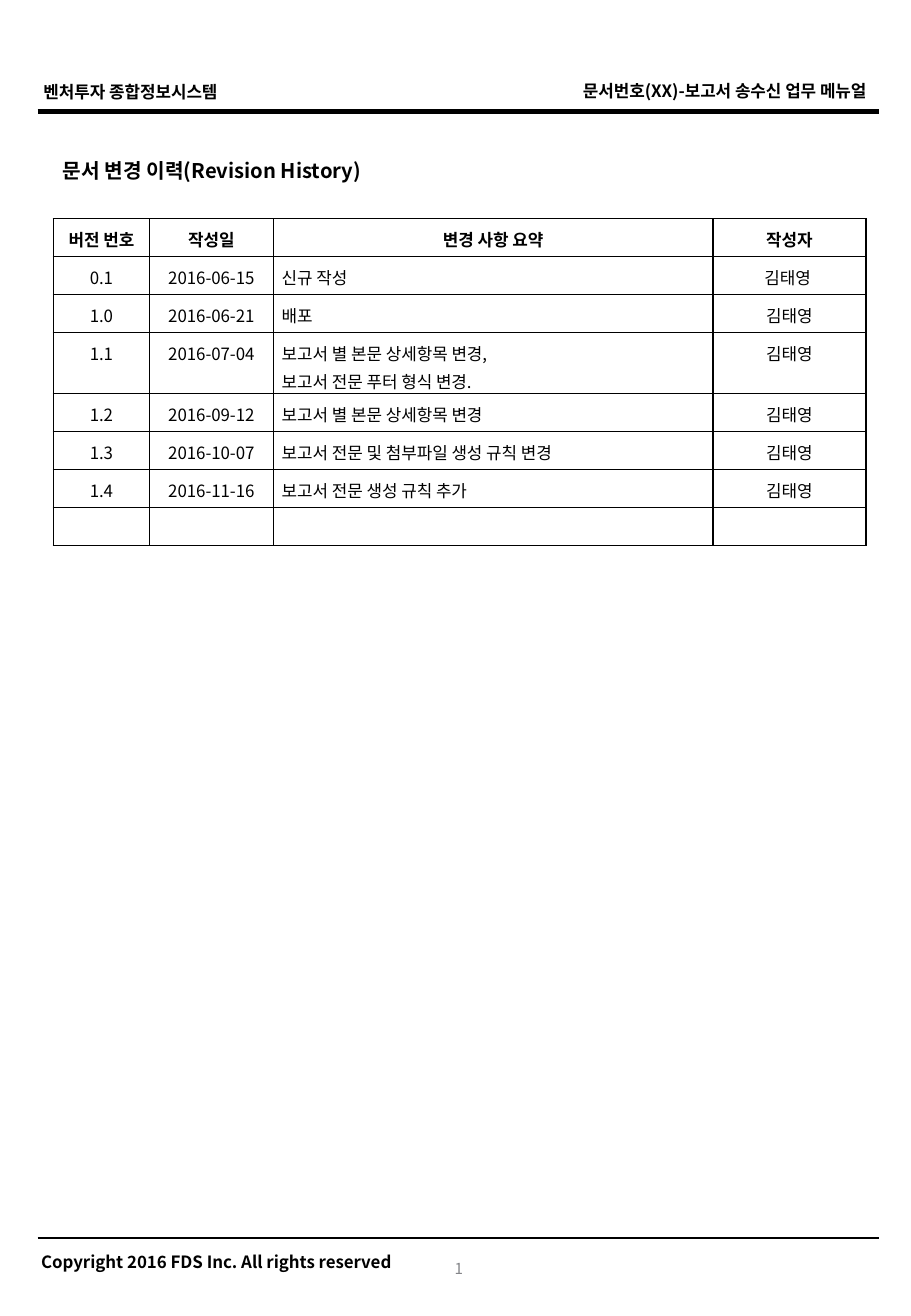
from lxml.etree import SubElement
from pptx import Presentation
from pptx.dml.color import RGBColor
from pptx.enum.shapes import MSO_CONNECTOR as Link
from pptx.enum.text import MSO_ANCHOR as Anchor, PP_ALIGN as Align
from pptx.oxml.ns import qn
from pptx.util import Inches, Pt

FACE = "Noto Sans CJK KR"
BLACK = "000000"
COLS = [0.79, 1.02, 3.62, 1.26]
HEAD = ["버전 번호", "작성일", "변경 사항 요약", "작성자"]
LOG = [
    ["0.1", "2016-06-15", "신규 작성", "김태영 "],
    ["1.0", "2016-06-21", "배포", "김태영"],
    ["1.1", "2016-07-04", "보고서 별 본문 상세항목 변경,\n보고서 전문 푸터 형식 변경.", "김태영"],
    ["1.2", "2016-09-12", "보고서 별 본문 상세항목 변경", "김태영"],
    ["1.3", "2016-10-07", "보고서 전문 및 첨부파일 생성 규칙 변경", "김태영"],
    ["1.4", "2016-11-16", "보고서 전문 생성 규칙 추가", "김태영"],
    ["", "", "", ""],
]


def paint(color):
    return RGBColor.from_string(color)


def style(para, size, bold, color=BLACK, align=Align.LEFT):
    para.alignment = align
    font = para.font
    font.size = Pt(size)
    font.bold = bold
    font.color.rgb = paint(color)
    font.name = FACE
    props = para._p.pPr.find(qn("a:defRPr"))
    SubElement(props, qn("a:ea"), typeface=FACE)


def add_text(slide, text, box, size=10, bold=True, color=BLACK,
             align=Align.LEFT, anchor=Anchor.MIDDLE):
    frame = slide.shapes.add_textbox(*map(Inches, box)).text_frame
    frame.word_wrap = True
    frame.vertical_anchor = anchor
    frame.margin_top = frame.margin_bottom = Inches(0.03)
    frame.text = text
    style(frame.paragraphs[0], size, bold, color, align)


def add_rule(slide, y, width):
    rule = slide.shapes.add_connector(
        Link.STRAIGHT, Inches(0.31), Inches(y), Inches(7.24), Inches(y))
    rule.line.color.rgb = paint(BLACK)
    rule.line.width = Pt(width)
    SubElement(rule._element.spPr, qn("a:effectLst"))


def add_edges(cell, top, base):
    props = cell._tc.get_or_add_tcPr()
    for side, width in zip("LRTB", [1, 1, top, base]):
        edge = SubElement(props, qn(f"a:ln{side}"), w=str(Pt(width)))
        fill = SubElement(edge, qn("a:solidFill"))
        SubElement(fill, qn("a:srgbClr"), val=BLACK)


def fill_cell(cell, text, bold, align, top, base):
    add_edges(cell, top, base)
    cell.fill.background()
    cell.margin_left = cell.margin_right = cell.margin_top = Inches(0.07)
    cell.margin_bottom = 0
    frame = cell.text_frame
    frame.text = text
    for i, para in enumerate(frame.paragraphs):
        if i:
            para.space_before = Pt(2)
        style(para, 10, bold, align=align)


def add_log(slide):
    rows = [HEAD] + LOG
    tall, full = 0.5, 2.69
    short = (full - tall) / (len(rows) - 1)
    table = slide.shapes.add_table(
        len(rows), len(COLS), Inches(0.44), Inches(1.8),
        Inches(sum(COLS)), Inches(full)).table
    table.first_row = table.horz_banding = False
    for col, width in zip(table.columns, COLS):
        col.width = Inches(width)
    for r, row in enumerate(rows):
        table.rows[r].height = Inches(tall if "\n" in row[2] else short)
        top = 0.75 if r > 5 else 1
        base = 0.75 if r > 4 else 1
        for c, text in enumerate(row):
            align = Align.LEFT if r and c == 2 else Align.CENTER
            fill_cell(table.cell(r, c), text, r == 0, align, top, base)


def main():
    deck = Presentation()
    deck.slide_width = Inches(7.5)
    deck.slide_height = Inches(10.83)
    slide = deck.slides.add_slide(deck.slide_layouts[6])
    add_rule(slide, 0.92, 3)
    add_text(slide, "벤처투자 종합정보시스템", (0.26, 0.62, 3.33, 0.27))
    add_rule(slide, 10.19, 1.25)
    add_text(slide, "Copyright 2016 FDS Inc. All rights reserved",
             (0.24, 10.25, 3.34, 0.27))
    add_text(slide, "문서번호(XX)-보고서 송수신 업무 메뉴얼",
             (3.12, 0.61, 4.11, 0.27), align=Align.RIGHT)
    add_text(slide, "1", (3.42, 10.19, 0.49, 0.35), 9, False, "848589",
             Align.RIGHT, Anchor.BOTTOM)
    add_log(slide)
    add_text(slide, "문서 변경 이력(Revision History)",
             (0.42, 1.25, 3.02, 0.3), 12)
    deck.save("out.pptx")


if __name__ == "__main__":
    main()
